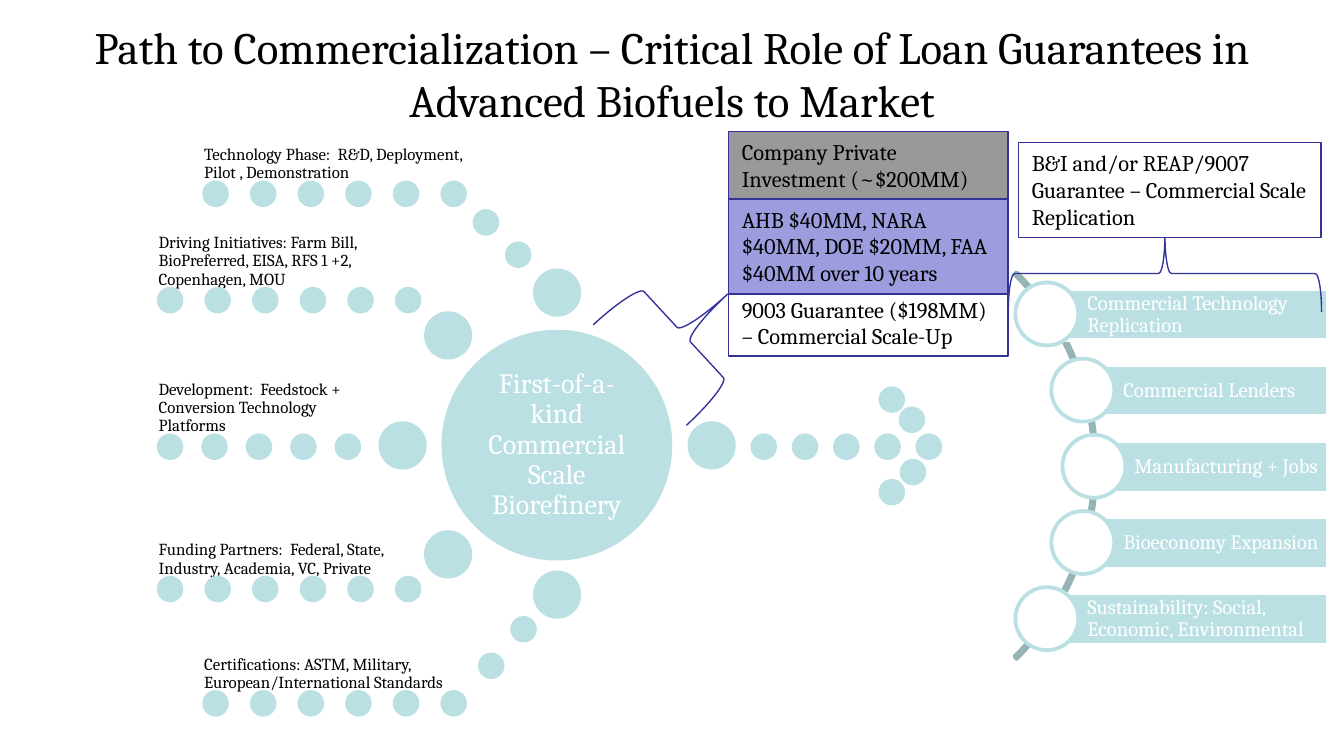
from dataclasses import dataclass

from pptx import Presentation
from pptx.dml.color import RGBColor
from pptx.enum.shapes import MSO_SHAPE as Preset
from pptx.enum.text import MSO_ANCHOR as Anchor, MSO_AUTO_SIZE as AutoSize, PP_ALIGN as Align
from pptx.util import Cm, Pt


@dataclass(frozen=True)
class Theme:
    font: str = "Cambria"
    aqua: str = "BBE0E3"
    arc: str = "96B3B6"
    navy: str = "333399"
    violet: str = "9C9CDF"
    gray: str = "999999"
    white: str = "FFFFFF"
    black: str = "000000"
    title: int = 24
    hub: int = 15
    callout: int = 12
    outcome: int = 11
    label: int = 9
    thick: float = 2
    thin: float = 0.75


theme = Theme()
deck = Presentation()
deck.slide_width, deck.slide_height = Cm(25.4), Cm(14.29)
page = deck.slides.add_slide(deck.slide_layouts[5])


def draw(preset, left, top, width, height, fill, line, weight=theme.thick):
    shape = page.shapes.add_shape(preset, Cm(left), Cm(top), Cm(width), Cm(height))
    shape.shadow.inherit = False
    if fill:
        shape.fill.solid()
        shape.fill.fore_color.rgb = RGBColor.from_string(fill)
    else:
        shape.fill.background()
    shape.line.color.rgb = RGBColor.from_string(line)
    shape.line.width = Pt(weight)
    return shape


def write(box, text, size, color, anchor, insets, align=Align.LEFT, spacing=0.9):
    frame = box.text_frame
    frame.word_wrap = True
    frame.auto_size = AutoSize.NONE
    frame.vertical_anchor = anchor
    frame.margin_left, frame.margin_top, frame.margin_right, frame.margin_bottom = map(Cm, insets)
    para = frame.paragraphs[0]
    para.text = text
    para.alignment = align
    para.line_spacing = spacing
    para.font.name = theme.font
    para.font.size = Pt(size)
    para.font.color.rgb = RGBColor.from_string(color)


# Title
title = page.shapes.title
title.left, title.top, title.width, title.height = Cm(1.27), Cm(0.48), Cm(22.86), Cm(1.8)
write(title, "Path to Commercialization – Critical Role of Loan Guarantees in Advanced Biofuels to Market",
      theme.title, theme.black, Anchor.MIDDLE, (0.25, 0.13, 0.25, 0.13), Align.CENTER, 1.0)

# Hub
hub = draw(Preset.OVAL, 8.38, 6.27, 4.29, 4.29, theme.aqua, theme.aqua)
write(hub, "First-of-a-kind Commercial Scale Biorefinery", theme.hub, theme.white,
      Anchor.MIDDLE, (0.05,) * 4, Align.CENTER)

# Inputs: text, label width, row left, row top, dot gap, dot count
inputs = [
    ("Technology Phase:  R&D, Deployment, Pilot , Demonstration", 4.95, 3.86, 3.45, 0.9, 6),
    ("Driving Initiatives: Farm Bill, BioPreferred, EISA, RFS 1 +2, Copenhagen, MOU",
     4.95, 3.0, 5.46, 0.9, 6),
    ("Development:  Feedstock + Conversion Technology Platforms", 3.76, 3.0, 8.23, 0.84, 5),
    ("Funding Partners:  Federal, State, Industry, Academia, VC, Private",
     4.95, 3.0, 10.92, 0.9, 6),
    ("Certifications: ASTM, Military, European/International Standards",
     4.95, 3.86, 13.08, 0.9, 6),
]
label_height = 1.09
dots = []
for text, width, left, top, gap, count in inputs:
    dots += [(left + gap * i, top) for i in range(count)]
    label = page.shapes.add_textbox(Cm(left), Cm(top - label_height), Cm(width), Cm(label_height))
    write(label, text, theme.label, theme.black, Anchor.BOTTOM, (0,) * 4)

# Links to the hub, then the arrow leaving it
dots += [(9.58, 4.6), (8.97, 3.99), (9.68, 11.68), (9.07, 12.37)]
dots += [(14.22 + 0.78 * i, 8.23) for i in range(5)]
dots += [(16.64, 7.34), (17.02, 7.72), (17.04, 8.71), (16.64, 9.09)]
nodes = [(10.11, 5.11), (8.05, 5.92), (7.19, 8.0), (8.05, 10.06), (10.11, 10.82), (13.03, 8.0)]
for diameter, places in ((0.43, dots), (0.84, nodes)):
    for left, top in places:
        draw(Preset.OVAL, left, top, diameter, diameter, theme.aqua, theme.aqua)

# Outcomes along an arc
arc = draw(Preset.BLOCK_ARC, 10.39, 3.63, 10.34, 10.34, None, theme.arc)
for index, value in enumerate((189, 27, 0.006)):
    arc.adjustments[index] = value

outcomes = [
    ("Commercial Technology Replication", 19.79),
    ("Commercial Lenders", 20.47),
    ("Manufacturing + Jobs", 20.68),
    ("Bioeconomy Expansion", 20.47),
    ("Sustainability: Social, Economic, Environmental", 19.79),
]
bar_right = 25.1
for row, (text, left) in enumerate(outcomes):
    top = 5.46 + 1.44 * row
    bar = draw(Preset.RECTANGLE, left, top, bar_right - left, 0.97, theme.aqua, theme.white)
    write(bar, text, theme.outcome, theme.white, Anchor.MIDDLE, (0.76, 0.08, 0.08, 0.08))
    draw(Preset.OVAL, left - 0.6, top - 0.12, 1.19, 1.19, theme.white, theme.aqua)

# Braces
for left, top, width, height, angle in ((11.79, 5.03, 2.26, 2.59, 137.3),
                                        (21.29, 2.21, 1.45, 5.92, 90)):
    brace = draw(Preset.LEFT_BRACE, left, top, width, height, None, theme.navy, theme.thin)
    brace.rotation = angle

# Funding callouts
callouts = [
    ("9003 Guarantee ($198MM) – Commercial Scale-Up", 13.77, 5.46, 5.28, 1.27, theme.white),
    ("B&I and/or REAP/9007 Guarantee – Commercial Scale Replication",
     19.25, 2.69, 5.72, 1.8, theme.white),
    ("AHB $40MM, NARA $40MM, DOE $20MM, FAA $40MM over 10 years",
     13.77, 3.76, 5.28, 1.8, theme.violet),
    ("Company Private Investment (~$200MM)", 13.77, 2.49, 5.28, 1.27, theme.gray),
]
for text, left, top, width, height, fill in callouts:
    callout = draw(Preset.RECTANGLE, left, top, width, height, fill, theme.navy, theme.thin)
    write(callout, text, theme.callout, theme.black, Anchor.TOP, (0.25, 0.13, 0.25, 0.13), spacing=1.0)
    callout.text_frame.auto_size = AutoSize.SHAPE_TO_FIT_TEXT

deck.save("out.pptx")
